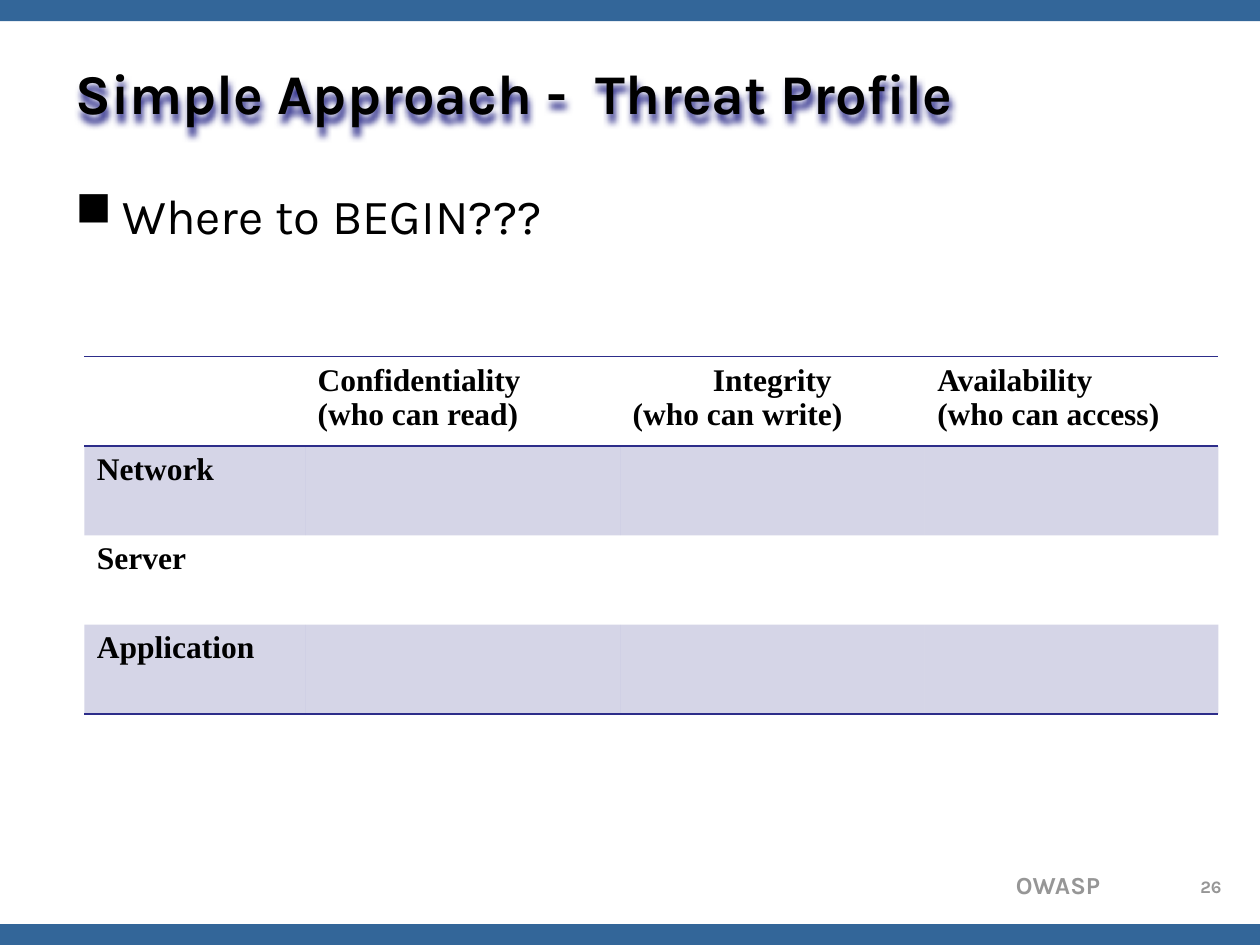
from lxml import etree
from pptx import Presentation
from pptx.dml.color import RGBColor
from pptx.enum import shapes, text
from pptx.oxml import ns
from pptx.util import Cm, Pt

HUES = {"bar": "336699", "ink": "000000", "grey": "969696", "navy": "2D2D8A"}
HEAD = ["", "Confidentiality\n(who can read)", "Integrity\n(who can write)",
        "Availability\n(who can access)"]
ROWS = ["Network", "Server", "Application"]
COLS = [4.45, 6.35, 6.14, 5.92]
ROW = 1.8
PLAIN = "{2D5ABB26-0587-4C30-8999-92F81FD0307C}"
LEFT = text.PP_ALIGN.LEFT
MID = text.PP_ALIGN.CENTER
RIGHT = text.PP_ALIGN.RIGHT


def tint(name):
    return RGBColor.from_string(HUES[name])


def node(root, tag, **attrs):
    return etree.SubElement(root, ns.qn(tag), attrs)


def style(para, face, size, hue, bold=False, align=LEFT):
    para.alignment = align
    font = para.font
    font.name, font.size, font.bold = face, Pt(size), bold
    font.color.rgb = tint(hue)


def add_bar(slide, top):
    bar = slide.shapes.add_shape(shapes.MSO_SHAPE.RECTANGLE,
                                 0, Cm(top), Cm(25.4), Cm(0.43))
    bar.shadow.inherit = False
    bar.fill.solid()
    bar.fill.fore_color.rgb = tint("bar")
    bar.line.fill.background()


def add_text(slide, words, left, top, width, height):
    box = slide.shapes.add_textbox(Cm(left), Cm(top), Cm(width), Cm(height))
    box.text_frame.word_wrap = True
    para = box.text_frame.paragraphs[0]
    para.text = words
    return para


def set_title(slide, words):
    title = slide.shapes.title
    title.left, title.top = Cm(1.27), Cm(0.76)
    title.width, title.height = Cm(22.86), Cm(2.21)
    frame = title.text_frame
    frame.text = words
    frame.vertical_anchor = text.MSO_ANCHOR.MIDDLE
    style(frame.paragraphs[0], "Karla", 32, "ink", True)
    glow = node(node(title._element.spPr, "a:effectLst"), "a:outerShdw",
                blurRad="50800", dist="50800", dir="5400000", algn="t", rotWithShape="0")
    node(glow, "a:srgbClr", val=HUES["navy"])


def add_bullet(slide, words):
    para = add_text(slide, words, 1.27, 3.61, 24.13, 13.41)
    props = para._p.get_or_add_pPr()
    props.set("marL", str(Cm(0.95)))
    props.set("indent", str(Cm(-0.95)))
    node(props, "a:buChar", char="■")
    style(para, "Karla", 28, "ink")


def add_edge(cell, tag):
    line = node(cell._tc.get_or_add_tcPr(), tag, w=str(Pt(1)))
    node(node(line, "a:solidFill"), "a:srgbClr", val=HUES["navy"])


def shade(cell):
    cell.fill.solid()
    cell.fill.fore_color.rgb = tint("navy")
    color = cell._tc.tcPr.find(ns.qn("a:solidFill") + "/" + ns.qn("a:srgbClr"))
    node(color, "a:alpha", val="20000")


def add_grid(slide):
    data = [HEAD] + [[name, "", "", ""] for name in ROWS]
    last = len(data) - 1
    grid = slide.shapes.add_table(len(data), len(COLS), Cm(1.7), Cm(7.19),
                                  Cm(sum(COLS)), Cm(ROW * len(data))).table
    grid._tbl.tblPr.find(ns.qn("a:tableStyleId")).text = PLAIN
    grid.first_row = grid.horz_banding = False
    for col, width in zip(grid.columns, COLS):
        col.width = Cm(width)
    for r, line in enumerate(data):
        grid.rows[r].height = Cm(ROW)
        for c, words in enumerate(line):
            cell = grid.cell(r, c)
            cell.text = words
            for para in cell.text_frame.paragraphs:
                align = MID if para.text == "Integrity" else LEFT
                style(para, "Times New Roman", 18, "ink", True, align)
            if r == 0:
                add_edge(cell, "a:lnT")
            if r in (0, last):
                add_edge(cell, "a:lnB")
            if r % 2:
                shade(cell)
            else:
                cell.fill.background()


def main():
    deck = Presentation()
    deck.slide_width, deck.slide_height = Cm(25.4), Cm(19.05)
    slide = deck.slides.add_slide(deck.slide_layouts[5])
    for top in (0, 18.63):
        add_bar(slide, top)
    foot = add_text(slide, "OWASP", 15.8, 17.42, 6.63, 0.84)
    style(foot, "Karla", 14, "grey", True, RIGHT)
    set_title(slide, "Simple Approach -  Threat Profile")
    add_bullet(slide, "Where to BEGIN???")
    page = add_text(slide, "26", 23.85, 17.53, 1.12, 0.64)
    style(page, "Karla", 10, "grey", True, MID)
    add_grid(slide)
    deck.save("out.pptx")


if __name__ == "__main__":
    main()
